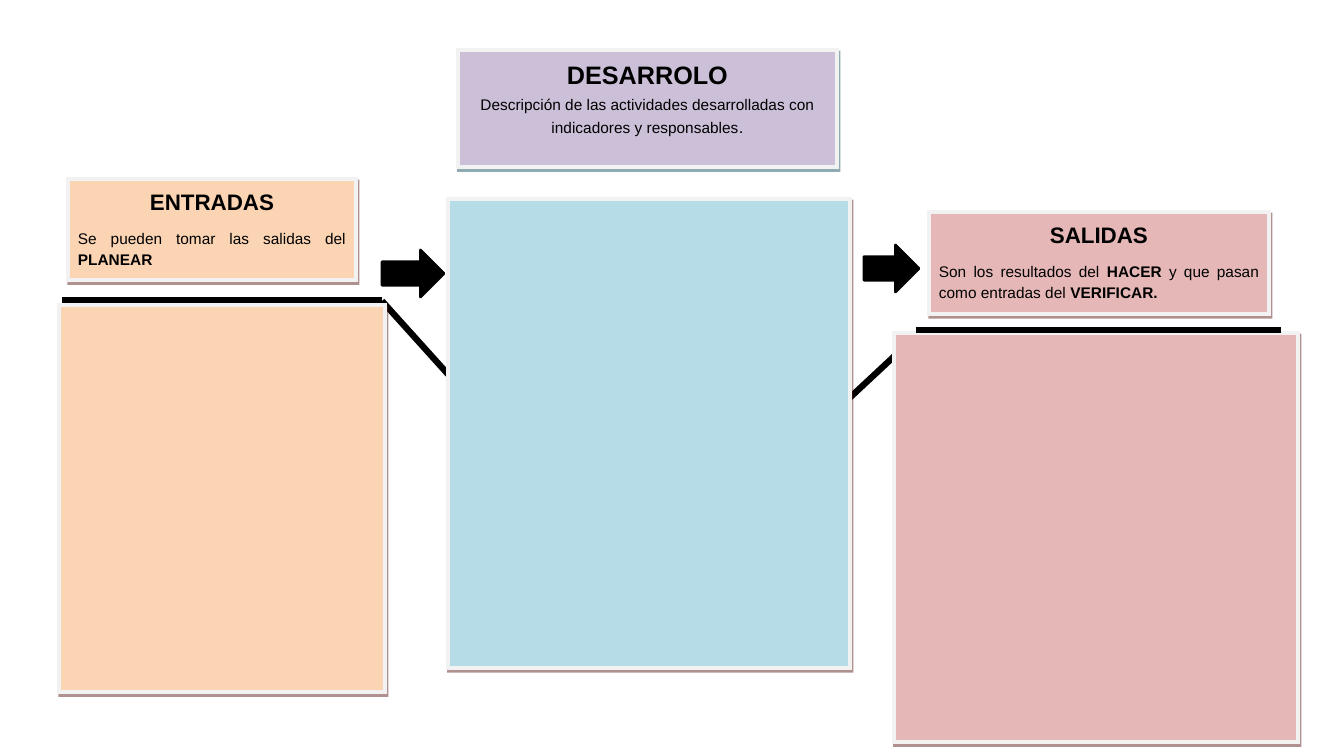
import pptx
import pptx.dml.color
import pptx.enum.shapes
import pptx.enum.text
import pptx.oxml.ns
import pptx.util
from lxml import etree

SCALE = 12192000 / 1344  # EMU in one px
COLORS = {
    "orange": "FBD4B4", "pink": "E5B8B7", "purple": "CCC0D9", "blue": "B6DDE7",
    "border": "F2F2F2", "black": "000000",
    "red_shadow": "632423", "teal_shadow": "205867",
}
SHAPES = pptx.enum.shapes.MSO_SHAPE
ALIGN = pptx.enum.text.PP_ALIGN


def px(*lengths):
    return [round(length * SCALE) for length in lengths]


def rgb(name):
    return pptx.dml.color.RGBColor.from_string(COLORS[name])


def add_xml(parent, tag, **attributes):
    return etree.SubElement(parent, pptx.oxml.ns.qn(tag), attributes)


class ProcessSlide:
    def __init__(self, presentation):
        self.slide = presentation.slides.add_slide(presentation.slide_layouts[6])
        self.font = "Arial"

    def shape(self, kind, bounds, fill, line, width):
        shape = self.slide.shapes.add_shape(kind, *px(*bounds))
        shape.fill.solid()
        shape.fill.fore_color.rgb = rgb(fill)
        shape.line.color.rgb = rgb(line)
        shape.line.width = pptx.util.Pt(width)
        shape.shadow.inherit = False
        return shape

    def box(self, bounds, fill, shadow="red_shadow"):
        shape = self.shape(SHAPES.RECTANGLE, bounds, fill, "border", 3)
        add_xml(shape.line._get_or_add_ln(), "a:miter", lim="800000")
        effects = shape._element.spPr.find(pptx.oxml.ns.qn("a:effectLst"))
        outer = add_xml(effects, "a:outerShdw", blurRad="0", dist="28000",
                        dir="3780000", algn="ctr", rotWithShape="0")
        color = add_xml(outer, "a:srgbClr", val=COLORS[shadow])
        add_xml(color, "a:alpha", val="49000")
        return shape

    def card(self, bounds, fill, title, title_size, runs, align, gap, **style):
        """Box with a bold title and a text of (words, bold, size) runs."""
        frame = self.box(bounds, fill, **style).text_frame
        frame.word_wrap = True
        frame.vertical_anchor = pptx.enum.text.MSO_ANCHOR.TOP
        heading = self.paragraph(frame.paragraphs[0], title_size, ALIGN.CENTER)
        heading.font.bold = True
        heading.add_run().text = title
        body = self.paragraph(frame.add_paragraph(), 11, align)
        body.space_before = pptx.util.Pt(gap)
        for words, bold, size in runs:
            run = body.add_run()
            run.text = words
            run.font.bold = bold
            run.font.size = pptx.util.Pt(size)

    def paragraph(self, paragraph, size, align):
        paragraph.alignment = align
        paragraph.line_spacing = 1.15
        paragraph.font.name = self.font
        paragraph.font.size = pptx.util.Pt(size)
        paragraph.font.color.rgb = rgb("black")
        return paragraph

    def line(self, *ends):
        connector = self.slide.shapes.add_connector(
            pptx.enum.shapes.MSO_CONNECTOR.STRAIGHT, *px(*ends))
        connector.line.color.rgb = rgb("black")
        connector.line.width = pptx.util.Pt(4.5)
        add_xml(connector._element.spPr, "a:effectLst")

    def arrow(self, *bounds):
        self.shape(SHAPES.RIGHT_ARROW, bounds, "black", "black", 2)


def main():
    presentation = pptx.Presentation()
    presentation.slide_width, presentation.slide_height = px(1344, 756)
    process = ProcessSlide(presentation)

    # Headed cards
    process.card((68, 179, 288, 101), "orange", "ENTRADAS", 16,
                 [("Se pueden tomar las salidas del ", False, 11),
                  ("PLANEAR", True, 11)], ALIGN.JUSTIFY, 8)
    process.card((929, 212, 340, 102), "pink", "SALIDAS", 16,
                 [("Son los resultados del ", False, 11),
                  ("HACER ", True, 11),
                  ("y que pasan como entradas del ", False, 11),
                  ("VERIFICAR.", True, 11)], ALIGN.JUSTIFY, 8)
    process.card((458, 50, 379, 117), "purple", "DESARROLO", 18,
                 [("Descripción de las actividades desarrolladas con "
                   "indicadores y responsables", False, 11),
                  (".", False, 12)], ALIGN.CENTER, 2, shadow="teal_shadow")

    # Slanted lines, partly behind the panels
    process.line(648, 586, 916, 336)
    process.line(382, 301, 647, 595)

    # Empty panels
    process.box((59, 305, 326, 387), "orange")
    process.box((448, 199, 402, 469), "blue")
    process.box((894, 333, 404, 409), "pink")

    # Bars above the side panels
    process.line(62, 300, 382, 300)
    process.line(916, 330, 1281, 330)

    # Flow arrows
    process.arrow(382, 250, 62, 47)
    process.arrow(864, 245, 55, 47)

    presentation.save("out.pptx")


if __name__ == "__main__":
    main()
